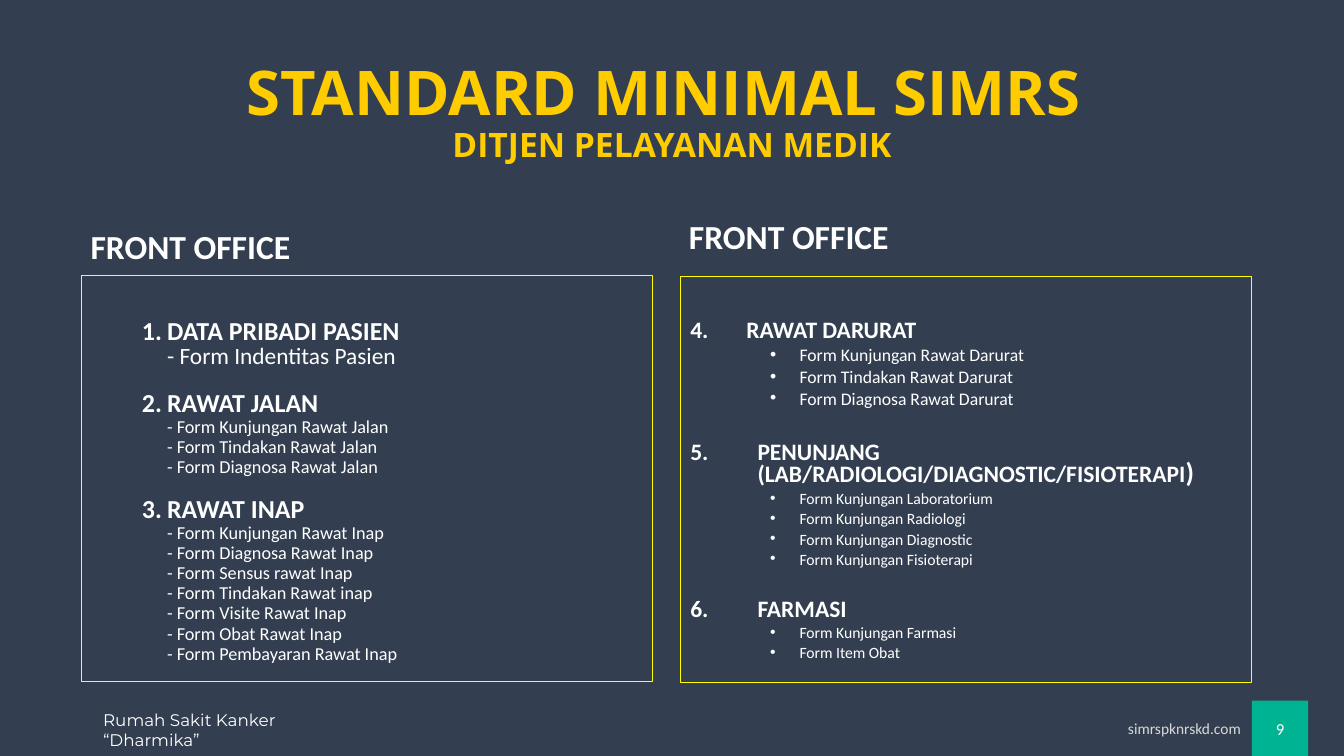
from lxml.etree import SubElement
from pptx import Presentation
from pptx.dml.color import RGBColor
from pptx.enum.shapes import MSO_SHAPE
from pptx.enum.text import MSO_ANCHOR, MSO_AUTO_SIZE, PP_ALIGN
from pptx.oxml.ns import qn
from pptx.util import Pt

COLORS = {
    "back": "333F50",
    "gold": "FFCC00",
    "white": "FFFFFF",
    "gray": "D9D9D9",
    "green": "00B393",
    "yellow": "FFFF00",
}

# Each group: heading, space before, item size, items
LEFT = [
    ("1.\tDATA PRIBADI PASIEN", 0, 16.7, ["Indentitas Pasien"]),
    ("2.\tRAWAT JALAN", 20.8, 13, [
        "Kunjungan Rawat Jalan", "Tindakan Rawat Jalan",
        "Diagnosa Rawat Jalan"]),
    ("3.\tRAWAT INAP", 19.4, 13, [
        "Kunjungan Rawat Inap", "Diagnosa Rawat Inap",
        "Sensus rawat Inap", "Tindakan Rawat inap", "Visite Rawat Inap",
        "Obat Rawat Inap", "Pembayaran Rawat Inap"]),
]
# Each group: heading, hanging indent, space before, item size, items
RIGHT = [
    ("4.\tRAWAT DARURAT", 40, 0, 12.6, [
        "Kunjungan Rawat Darurat", "Tindakan Rawat Darurat",
        "Diagnosa Rawat Darurat"]),
    ("5.\tPENUNJANG (LAB/RADIOLOGI/DIAGNOSTIC/FISIOTERAPI", 48, 25.8, 11.2, [
        "Kunjungan Laboratorium", "Kunjungan Radiologi",
        "Kunjungan Diagnostic", "Kunjungan Fisioterapi"]),
    ("6.\tFARMASI", 48, 24, 11.2, ["Kunjungan Farmasi", "Item Obat"]),
]


def color(name):
    return RGBColor.from_string(COLORS[name])


def add_run(para, text, size, font="Calibri", ink="white", bold=False):
    run = para.add_run()
    run.text = text
    run.font.size = Pt(size)
    run.font.name = font
    run.font.bold = bold
    run.font.color.rgb = color(ink)


def write(frame, text, size, align=PP_ALIGN.LEFT, lines=0.9, before=0,
          left=0, first=0, bullet=None, **style):
    """Fill the first paragraph, or add one when the frame has text."""
    para = frame.paragraphs[0] if not frame.text else frame.add_paragraph()
    props = para._p.get_or_add_pPr()
    props.set("marL", str(Pt(left)))
    props.set("indent", str(Pt(first)))
    if bullet:
        SubElement(props, qn("a:buFont")).set("typeface", "Arial")
        SubElement(props, qn("a:buChar")).set("char", bullet)
    else:
        SubElement(props, qn("a:buNone"))
    para.alignment = align
    para.line_spacing = lines
    para.space_before = Pt(before)
    add_run(para, text, size, **style)
    return para


def set_frame(shape, anchor, top=3.6):
    frame = shape.text_frame
    frame.word_wrap = True
    frame.auto_size = MSO_AUTO_SIZE.NONE
    frame.vertical_anchor = anchor
    frame.margin_top = Pt(top)
    return frame


def add_label(slide, box, anchor, text, size, **style):
    shape = slide.shapes.add_textbox(*map(Pt, box))
    return write(set_frame(shape, anchor), text, size, **style)


def add_rect(slide, box, fill=None, line=None):
    rect = slide.shapes.add_shape(MSO_SHAPE.RECTANGLE, *map(Pt, box))
    rect.shadow.inherit = False
    if fill:
        rect.fill.solid()
        rect.fill.fore_color.rgb = color(fill)
    else:
        rect.fill.background()
    if line:
        rect.line.color.rgb = color(line)
        rect.line.width = Pt(0.75)
    else:
        rect.line.fill.background()
    return rect


def add_panel(slide, left, top, inset):
    rect = add_rect(slide, (left, top, 408, 290), line="yellow")
    return set_frame(rect, MSO_ANCHOR.TOP, inset)


def add_title(slide):
    title = slide.shapes.title
    title.left, title.top = Pt(66), Pt(28.8)
    title.width, title.height = Pt(828), Pt(104.4)
    style = {"font": "Open Sans", "ink": "gold", "bold": True}
    para = write(set_frame(title, MSO_ANCHOR.MIDDLE),
                 "STANDARD MINIMAL SIMRS ", 44, align=PP_ALIGN.CENTER,
                 **style)
    para.add_line_break()
    add_run(para, "DITJEN PELAYANAN MEDIK", 24, **style)


def fill_left(frame):
    for head, gap, size, items in LEFT:
        write(frame, head, 18.5, lines=0.6, before=gap, left=54, first=-18,
              bold=True)
        for item in items:
            write(frame, "- Form " + item, size, lines=0.6, before=5, left=54)


def fill_right(frame):
    for head, hang, gap, size, items in RIGHT:
        para = write(frame, head, 16.8, lines=0.7, before=gap, left=hang,
                     first=-hang, bold=True)
        if "(" in head:
            add_run(para, ")", 19.6, bold=True)
        for item in items:
            write(frame, "Form " + item, size, lines=0.7, before=5, left=78,
                  first=-21, bullet="•")


def add_footer(slide):
    style = {"size": 12, "font": "Montserrat"}
    para = add_label(slide, (66.6, 503.3, 206.6, 36), MSO_ANCHOR.TOP,
                     "Rumah Sakit Kanker", lines=1, **style)
    para.add_line_break()
    add_run(para, "“Dharmika”", **style)
    add_label(slide, (746.6, 512.7, 147, 16.6), MSO_ANCHOR.MIDDLE,
              "simrspknrskd.com", 11, align=PP_ALIGN.RIGHT, ink="gray")
    badge = add_rect(slide, (894.2, 500.4, 40.3, 39.6), fill="green")
    write(set_frame(badge, MSO_ANCHOR.MIDDLE), "9", 12,
          align=PP_ALIGN.CENTER, lines=1)


def main():
    deck = Presentation()
    deck.slide_width, deck.slide_height = Pt(960), Pt(540)
    slide = deck.slides.add_slide(deck.slide_layouts[5])
    slide.background.fill.solid()
    slide.background.fill.fore_color.rgb = color("back")
    add_title(slide)
    for box in ((57.6, 151, 237.6, 43.2), (485, 152.6, 205.2, 34.6)):
        add_label(slide, box, MSO_ANCHOR.BOTTOM, "FRONT OFFICE", 24,
                  bold=True)
    fill_left(add_panel(slide, 58.3, 196.6, 36))
    fill_right(add_panel(slide, 486, 197.3, 33.5))
    add_footer(slide)
    deck.save("out.pptx")


if __name__ == "__main__":
    main()
